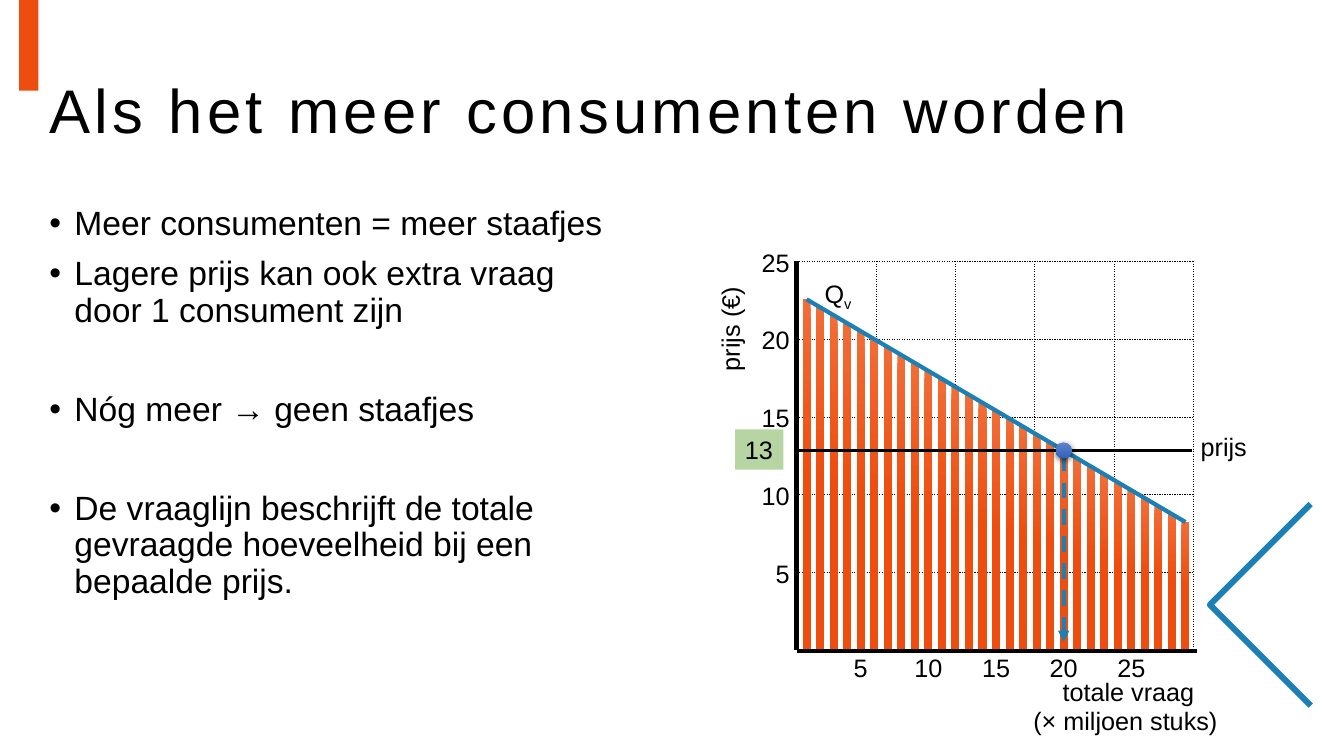
from lxml import etree
from pptx import Presentation, util as u
from pptx.dml.color import RGBColor
from pptx.enum import dml, shapes, text
from pptx.oxml import ns

# Content
TITLE = "Als het meer consumenten worden"
BULLETS = [  # text, space before in points
    ("Meer consumenten = meer staafjes", 0),
    ("Lagere prijs kan ook extra vraag door 1 consument zijn", 10),
    ("Nóg meer → geen staafjes", 45),
    ("De vraaglijn beschrijft de totale gevraagde hoeveelheid bij een bepaalde prijs.", 45),
]
TICKS = [5, 10, 15, 20, 25]
CONSUMERS = 29
SOLD = 20
PRICE = "13"

# Style
FONT = "Arial"
BLACK = RGBColor(0x00, 0x00, 0x00)
ORANGE = RGBColor(0xED, 0x4D, 0x0F)
LIGHT_ORANGE = RGBColor(0xF2, 0x6C, 0x36)
BLUE = RGBColor(0x1A, 0x80, 0xB6)
GREEN = RGBColor(0x70, 0xAD, 0x47)
DOT_LIGHT = RGBColor(0x61, 0x83, 0xCB)
DOT_DARK = RGBColor(0x30, 0x62, 0xBB)

# Grid of the graph, in inches
WIDTH, HEIGHT = 13.33, 7.5
LEFT, TOP, BOTTOM = 7.9, 2.59, 6.45
COLUMN = 0.787
ROW = (BOTTOM - TOP) / len(TICKS)
RIGHT = LEFT + COLUMN * len(TICKS)
BAR_WIDTH, BAR_STEP, BAR_DROP = 0.08, 0.1342, 0.0789
BAR_BOTTOM = 6.435
LABEL_HEIGHT = 0.4

presentation = Presentation()
presentation.slide_width, presentation.slide_height = u.Inches(WIDTH), u.Inches(HEIGHT)
slide = presentation.slides.add_slide(presentation.slide_layouts[6])


def quantity_x(quantity):
    return 8.0 + (quantity - 1) * BAR_STEP


def demand_y(quantity):
    return 2.97 + (quantity - 1) * BAR_DROP


def add_xml(parent, tag, **attributes):
    return etree.SubElement(parent, ns.qn(tag), attributes)


def style_run(run, size):
    run.font.name, run.font.size = FONT, u.Pt(size)
    run.font.color.rgb = BLACK


def add_label(words, left, top, width, align=text.PP_ALIGN.LEFT):
    box = slide.shapes.add_textbox(*map(u.Inches, (left, top, width, LABEL_HEIGHT)))
    box.text_frame.word_wrap = False
    paragraph = box.text_frame.paragraphs[0]
    paragraph.text, paragraph.alignment = words, align
    style_run(paragraph.runs[0], 18)
    return box


def add_line(start, end, width, color=BLACK, dashed=False):
    line = slide.shapes.add_connector(
        shapes.MSO_CONNECTOR.STRAIGHT, *map(u.Inches, start + end))
    line.line.width, line.line.color.rgb = u.Pt(width), color
    if dashed:
        line.line.dash_style = dml.MSO_LINE.DASH
    add_xml(line._element.spPr, "a:effectLst")
    return line


def add_plain_shape(kind, left, top, width, height):
    shape = slide.shapes.add_shape(kind, *map(u.Inches, (left, top, width, height)))
    shape.shadow.inherit = False
    shape.line.fill.background()
    return shape


def fill_gradient(shape, top_color, bottom_color, end):
    shape.fill.gradient()
    shape.fill.gradient_angle = 270
    first, last = shape.fill.gradient_stops
    first.color.rgb, first.position = top_color, 0
    last.color.rgb, last.position = bottom_color, end


# Decoration
accent = add_plain_shape(shapes.MSO_SHAPE.RECTANGLE, 0.19, 0, 0.19, 0.9)
accent.fill.solid()
accent.fill.fore_color.rgb = ORANGE
builder = slide.shapes.build_freeform(WIDTH, 5.14, scale=u.Inches(1))
builder.add_line_segments([(12.35, 6.12), (WIDTH, 7.1)], close=False)
chevron = builder.convert_to_shape()
chevron.shadow.inherit = False
chevron.fill.background()
chevron.line.color.rgb, chevron.line.width = BLUE, u.Pt(4.25)

# Title
title = slide.shapes.add_textbox(*map(u.Inches, (0.39, 0.4, 12.58, 1.45)))
title.text_frame.word_wrap = True
title.text_frame.vertical_anchor = text.MSO_ANCHOR.MIDDLE
title.text_frame.text = TITLE
heading = title.text_frame.paragraphs[0]
heading.line_spacing = 0.9
style_run(heading.runs[0], 44)
heading.runs[0]._r.get_or_add_rPr().set("spc", "300")

# Bullets
body = slide.shapes.add_textbox(*map(u.Inches, (0.39, 2, 5.78, 5.1)))
body.text_frame.word_wrap = True
body.text_frame.text = "\n".join(words for words, _ in BULLETS)
for paragraph, (_, space) in zip(body.text_frame.paragraphs, BULLETS):
    paragraph.line_spacing, paragraph.space_before = 0.9, u.Pt(space)
    style_run(paragraph.runs[0], 24)
    properties = paragraph._p.get_or_add_pPr()
    properties.set("marL", str(u.Inches(0.25)))
    properties.set("indent", str(u.Inches(-0.25)))
    add_xml(properties, "a:buFont", typeface=FONT)
    add_xml(properties, "a:buChar", char="•")

# Grid lines, axes and tick labels
add_line((LEFT, TOP), (LEFT, BOTTOM), 3)
for index, tick in enumerate(TICKS):
    row_y = TOP + index * ROW
    column_x = LEFT + (index + 1) * COLUMN
    add_line((LEFT, row_y), (RIGHT, row_y), 0.25, dashed=True)
    add_line((column_x, TOP), (column_x, BOTTOM), 0.25, dashed=True)
    add_label(str(tick), 7.45, BOTTOM - (index + 1) * ROW - 0.19, 0.48, text.PP_ALIGN.RIGHT)
    add_label(str(tick), quantity_x(tick) - 0.24, 6.42, 0.48, text.PP_ALIGN.CENTER)
add_line((11.87, 6.46), (LEFT, 6.46), 3)
add_label("totale vraag", 10.44, 6.66, 1.52)
add_label("(× miljoen stuks)", 10.15, 6.95, 2.05)
add_label("prijs (€)", 6.72, 3.06, 1.04).rotation = 270

# One bar per consumer
for consumer in range(1, CONSUMERS + 1):
    bar_top = demand_y(consumer)
    bar = add_plain_shape(
        shapes.MSO_SHAPE.RECTANGLE, quantity_x(consumer) - BAR_WIDTH / 2, bar_top,
        BAR_WIDTH, BAR_BOTTOM - bar_top)
    fill_gradient(bar, LIGHT_ORANGE, ORANGE, 0.51)

# Price line with its marked value
price_y, sold_x = demand_y(SOLD), quantity_x(SOLD)
price_tag = add_label(PRICE, 7.29, 4.26, 0.48)
price_tag.fill.solid()
price_tag.fill.fore_color.rgb = GREEN
green = price_tag._element.spPr.find(".//" + ns.qn("a:srgbClr"))
add_xml(green, "a:alpha", val="50000")
add_label("prijs", 11.81, 4.23, 0.66)
add_line((LEFT, price_y), (11.82, price_y), 1.5)

# Demand line
add_line((quantity_x(1), demand_y(1)), (quantity_x(CONSUMERS), demand_y(CONSUMERS)), 3, BLUE)
demand = add_label("Q", 8.08, 2.71, 0.48).text_frame.paragraphs[0]
subscript = demand.add_run()
subscript.text = "v"
style_run(subscript, 18)
subscript._r.get_or_add_rPr().set("baseline", "-25000")

# Arrow to the quantity sold, and the point on the demand line
arrow = add_line((sold_x, 4.52), (sold_x, 6.37), 2.75, BLUE, dashed=True)
add_xml(arrow.line._get_or_add_ln(), "a:tailEnd", type="triangle")
point = add_plain_shape(shapes.MSO_SHAPE.OVAL, sold_x - 0.08, price_y - 0.08, 0.16, 0.16)
fill_gradient(point, DOT_LIGHT, DOT_DARK, 1)
effects = point._element.spPr.find(ns.qn("a:effectLst"))
shadow = add_xml(effects, "a:outerShdw", blurRad=str(u.Pt(4.5)), dist=str(u.Pt(1.5)),
                 dir="5400000", algn="ctr", rotWithShape="0")
shadow_color = add_xml(shadow, "a:srgbClr", val=str(BLACK))
add_xml(shadow_color, "a:alpha", val="63000")

presentation.save("out.pptx")
